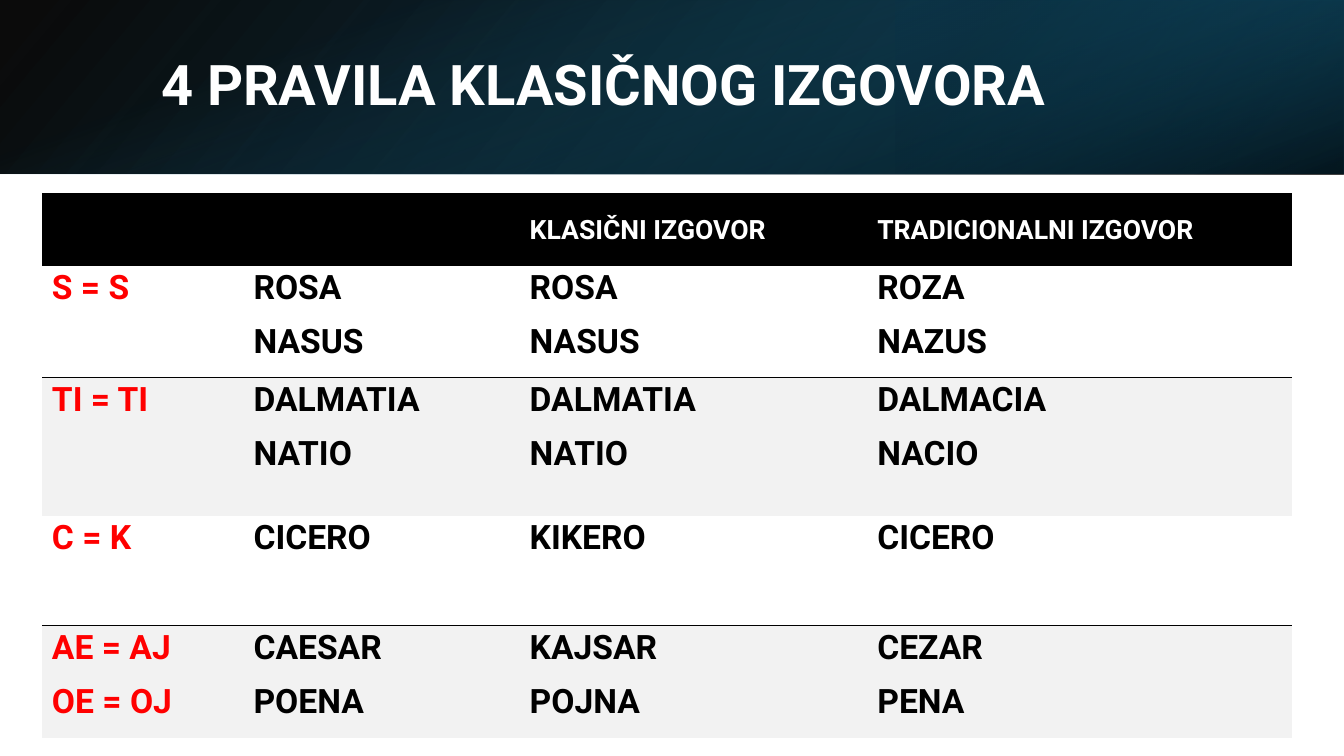
from lxml import etree
from pptx import Presentation
from pptx.dml.color import RGBColor
from pptx.enum.shapes import MSO_SHAPE
from pptx.enum.text import MSO_ANCHOR
from pptx.oxml.ns import qn
from pptx.util import Cm, Pt

RECT = MSO_SHAPE.RECTANGLE
MIDDLE = MSO_ANCHOR.MIDDLE
TOP = MSO_ANCHOR.TOP
FONT = "Roboto"
COLORS = {
    "black": "000000", "white": "FFFFFF", "red": "FF0000", "stripe": "F2F2F2",
    "teal": "104862", "navy": "0B3041", "blue": "156082",
}
COLUMNS = [5.08, 6.96, 8.76, 10.69]
ROWS = [1.83, 2.77, 3.48, 2.77, 2.77]
RULES = [
    ["", "", "KLASIČNI IZGOVOR", "TRADICIONALNI IZGOVOR"],
    ["S = S", "ROSA\nNASUS", "ROSA\nNASUS", "ROZA\nNAZUS"],
    ["TI = TI", "DALMATIA\nNATIO", "DALMATIA\nNATIO", "DALMACIA\nNACIO"],
    ["C = K", "CICERO", "KIKERO", "CICERO"],
    ["AE = AJ\nOE = OJ", "CAESAR\nPOENA", "KAJSAR\nPOJNA", "CEZAR\nPENA"],
]


def rgb(name):
    """Return the named colour."""
    return RGBColor.from_string(COLORS[name])


def add_band(s, box, stops, angle, rotation=0, flip=False):
    """Add a gradient rectangle; each stop is (position, colour, opacity) in percent."""
    sp = s.shapes.add_shape(RECT, *map(Cm, box))
    sp.shadow.inherit = False
    sp.rotation = rotation
    sp.line.fill.background()
    if flip:
        sp.element.spPr.find(qn("a:xfrm")).set("flipH", "1")
    sp.fill.gradient()
    sp.fill.gradient_angle = 360 - angle
    gradient = sp.element.spPr.find(qn("a:gradFill"))
    elements = gradient.findall(".//" + qn("a:gs"))
    for stop, gs, (position, color, opacity) in zip(sp.fill.gradient_stops, elements, stops):
        stop.position = position / 100
        stop.color.rgb = rgb(color)
        alpha = etree.SubElement(gs.find(qn("a:srgbClr")), qn("a:alpha"))
        alpha.set("val", str(opacity * 1000))


def write(tf, text, size, color, spacing, after=0):
    """Fill a text frame with bold paragraphs, one for each line."""
    tf.text = text
    for p in tf.paragraphs:
        p.line_spacing = spacing
        p.space_after = Pt(after)
        p.font.name = FONT
        p.font.size = Pt(size)
        p.font.bold = True
        p.font.color.rgb = rgb(color)


def add_title(s, text):
    """Add the slide title."""
    tf = s.shapes.add_textbox(Cm(3.81), Cm(0.97), Cm(27.89), Cm(2.44)).text_frame
    tf.word_wrap = True
    tf.vertical_anchor = MIDDLE
    write(tf, text, 40, "white", 0.9)


def set_borders(cell, ruled):
    """Draw black lines on the ruled sides and none on the others."""
    tcPr = cell._tc.get_or_add_tcPr()
    for side in "LRTB":
        ln = etree.SubElement(tcPr, qn("a:ln" + side), w=str(Pt(1)))
        if side in ruled:
            fill = etree.SubElement(ln, qn("a:solidFill"))
            etree.SubElement(fill, qn("a:srgbClr"), val=COLORS["black"])
        else:
            etree.SubElement(ln, qn("a:noFill"))


def format_cell(cell, row, column, text):
    """Style one cell by its place in the table and write its text."""
    header = row == 0
    striped = row % 2 == 0
    set_borders(cell, "" if header else "T" if striped else "B")
    if striped:
        cell.fill.solid()
        cell.fill.fore_color.rgb = rgb("black" if header else "stripe")
    else:
        cell.fill.background()
    cell.margin_left, cell.margin_right = Cm(0.25), Cm(0.18)
    cell.margin_top, cell.margin_bottom = Cm(0.36 if header else 0), Cm(0.36)
    cell.vertical_anchor = MIDDLE if header else TOP
    color = "white" if header else "red" if column == 0 else "black"
    write(cell.text_frame, text, 19 if header else 24, color, 1.07, 8)


def add_rules_table(s):
    """Add the table of pronunciation rules."""
    table = s.shapes.add_table(len(ROWS), len(COLUMNS), Cm(1.06), Cm(4.87),
                               Cm(sum(COLUMNS)), Cm(sum(ROWS))).table
    table.first_row = table.horz_banding = False
    for column, width in zip(table.columns, COLUMNS):
        column.width = Cm(width)
    for i, (height, texts) in enumerate(zip(ROWS, RULES)):
        table.rows[i].height = Cm(height)
        for j, text in enumerate(texts):
            format_cell(table.cell(i, j), i, j, text)


def main():
    """Build the slide and save it."""
    prs = Presentation()
    prs.slide_width, prs.slide_height = Cm(33.87), Cm(19.05)
    s = prs.slides.add_slide(prs.slide_layouts[6])
    add_band(s, (0, 0, 33.87, 4.38), [(0, "black", 96), (100, "teal", 100)], 140, flip=True)
    add_band(s, (22.58, 0, 11.29, 4.38), [(19, "navy", 68), (100, "blue", 79)], 320, 180, True)
    add_band(s, (14.74, -14.74, 4.38, 33.87), [(23, "blue", 0), (99, "black", 74)], 340, 90)
    add_title(s, "4 PRAVILA KLASIČNOG IZGOVORA")
    add_rules_table(s)
    prs.save("out.pptx")


if __name__ == "__main__":
    main()
